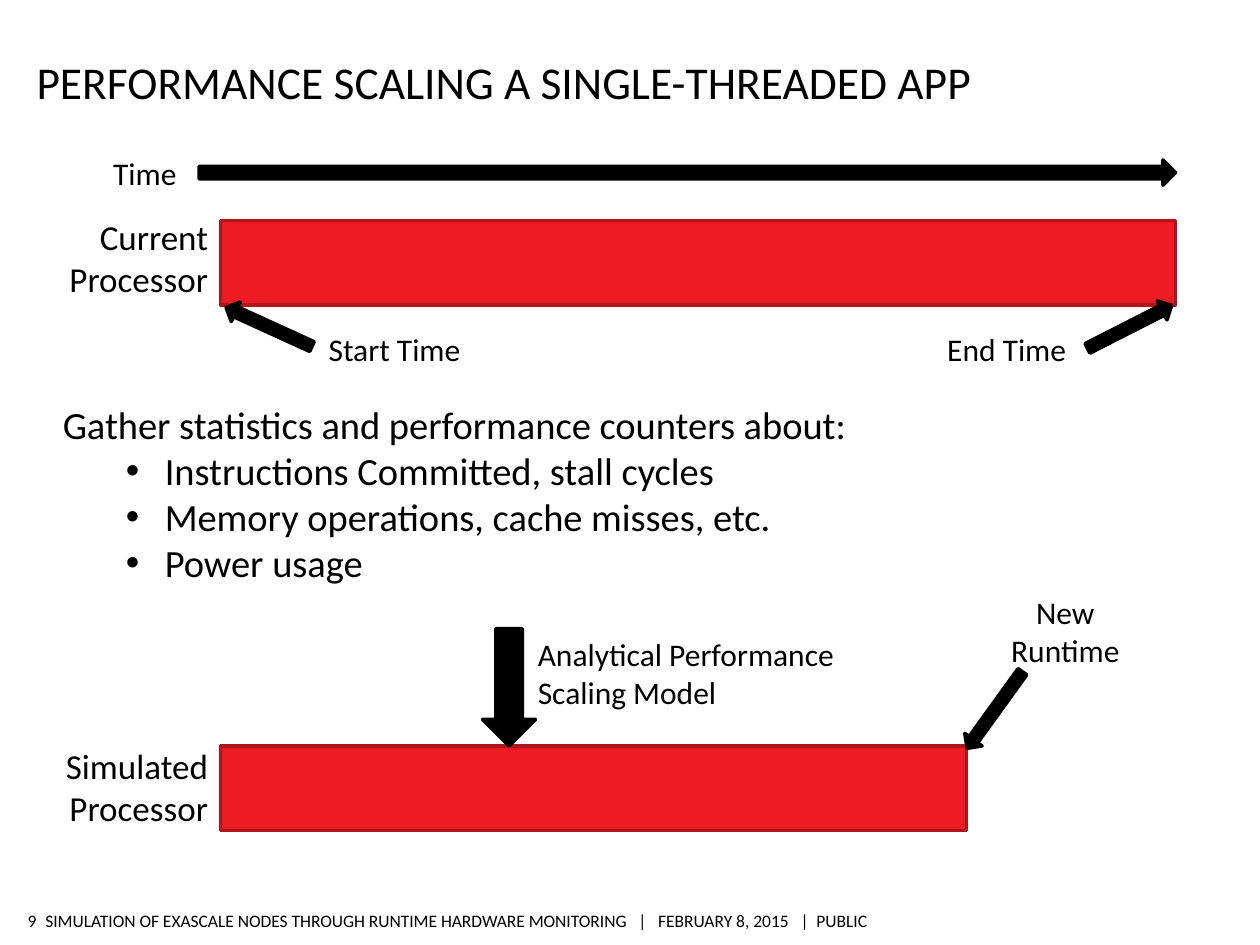
from dataclasses import dataclass

from pptx import Presentation
from pptx.dml.color import RGBColor
from pptx.enum.shapes import MSO_SHAPE
from pptx.enum.text import MSO_ANCHOR, PP_ALIGN
from pptx.util import Inches, Pt
from lxml.etree import SubElement
from pptx.oxml.ns import qn

COLORS = {"black": "000000", "red": "ED1C24", "dark_red": "AF151B"}
FONT = "Calibri"
LEFT, CENTER, RIGHT = PP_ALIGN.LEFT, PP_ALIGN.CENTER, PP_ALIGN.RIGHT
BAR_LEFT, BAR_HEIGHT = 1.75, 0.67


@dataclass
class Label:
    text: str
    left: float
    top: float
    width: float
    height: float
    size: int = 18
    align: PP_ALIGN = LEFT
    anchor: MSO_ANCHOR = MSO_ANCHOR.TOP
    insets: tuple = (0.1, 0.05, 0.1, 0.05)
    wrap: bool = True
    bullets: bool = False  # every paragraph after the first is a bullet


@dataclass
class Block:
    kind: MSO_SHAPE
    left: float
    top: float
    width: float
    height: float
    rotation: float = 0
    fill: str = "black"
    line: str = "black"


def color(name: str) -> RGBColor:
    return RGBColor.from_string(COLORS[name])


def add_bullet(para) -> None:
    properties = para._p.get_or_add_pPr()
    properties.set("marL", str(Inches(0.81)))
    properties.set("indent", str(Inches(-0.31)))
    SubElement(properties, qn("a:buFont")).set("typeface", "Arial")
    SubElement(properties, qn("a:buChar")).set("char", "•")


def draw_label(page, label: Label) -> None:
    box = page.shapes.add_textbox(Inches(label.left), Inches(label.top),
                                  Inches(label.width), Inches(label.height))
    frame = box.text_frame
    frame.word_wrap = label.wrap
    frame.vertical_anchor = label.anchor
    (frame.margin_left, frame.margin_top,
     frame.margin_right, frame.margin_bottom) = map(Inches, label.insets)
    frame.text = label.text
    for index, para in enumerate(frame.paragraphs):
        if label.bullets and index:
            para.level = 1
            add_bullet(para)
        para.alignment = label.align
        for span in para.runs:
            span.font.name = FONT
            span.font.size = Pt(label.size)
            span.font.color.rgb = color("black")


def draw_block(page, block: Block) -> None:
    shape = page.shapes.add_shape(block.kind, Inches(block.left), Inches(block.top),
                                  Inches(block.width), Inches(block.height))
    shape.shadow.inherit = False
    shape.rotation = block.rotation
    shape.fill.solid()
    shape.fill.fore_color.rgb = color(block.fill)
    shape.line.color.rgb = color(block.line)
    shape.line.width = Pt(2)


def runtime_bar(top: float, width: float) -> Block:
    return Block(MSO_SHAPE.RECTANGLE, BAR_LEFT, top, width, BAR_HEIGHT,
                 fill="red", line="dark_red")


def pointer(left: float, top: float, rotation: float) -> Block:
    return Block(MSO_SHAPE.RIGHT_ARROW, left, top, 0.75, 0.17, rotation)


def footer(text: str, left: float, width: float, align: PP_ALIGN) -> Label:
    return Label(text, left, 7.18, width, 0.26, 10, align, MSO_ANCHOR.MIDDLE,
                 (0, 0.04, 0, 0.04), wrap=False)


BLOCKS = [
    # Processor runtimes
    runtime_bar(1.75, 7.58),
    runtime_bar(5.92, 5.92),
    # Time axis and scaling step
    Block(MSO_SHAPE.RIGHT_ARROW, 1.58, 1.27, 7.75, 0.2),
    Block(MSO_SHAPE.DOWN_ARROW, 3.83, 4.99, 0.42, 0.93),
    # Pointers to start, end and new runtime
    pointer(1.76, 2.51, 204.5),
    pointer(8.59, 2.51, 333),
    pointer(7.52, 5.55, 125.8),
]

STATISTICS = "\n".join([
    "Gather statistics and performance counters about:",
    "Instructions Committed, stall cycles",
    "Memory operations, cache misses, etc.",
    "Power usage",
])

LABELS = [
    # Footer and title
    footer("SIMULATION OF EXASCALE NODES THROUGH RUNTIME HARDWARE MONITORING"
           "   |   FEBRUARY 8, 2015   |  PUBLIC", 0.36, 6.79, LEFT),
    footer("9", 0.13, 0.16, RIGHT),
    Label("PERFORMANCE SCALING A SINGLE-THREADED APP", 0.29, 0.34, 8.4, 0.52, 26,
          anchor=MSO_ANCHOR.BOTTOM, insets=(0, 0.05, 0, 0)),
    # Bar names
    Label("Current Processor", 0, 1.66, BAR_LEFT, 0.77, 20, RIGHT),
    Label("Simulated Processor", 0, 5.86, BAR_LEFT, 0.77, 20, RIGHT),
    # Arrow names
    Label("Time", 0.4, 1.17, 1.5, 0.4, align=CENTER),
    Label("Start Time", 2.51, 2.57, 1.53, 0.4),
    Label("End Time", 7.18, 2.57, 1.38, 0.4, align=RIGHT),
    Label("Analytical Performance Scaling Model", 4.17, 4.99, 2.87, 0.71),
    Label("New\nRuntime", 7.87, 4.66, 1.17, 0.71, align=CENTER),
    # Collected statistics
    Label(STATISTICS, 0.4, 3.13, 8.93, 1.58, 22, bullets=True),
]


def main() -> None:
    deck = Presentation()
    deck.slide_width, deck.slide_height = Inches(10), Inches(7.5)
    page = deck.slides.add_slide(deck.slide_layouts[6])
    for block in BLOCKS:
        draw_block(page, block)
    for label in LABELS:
        draw_label(page, label)
    deck.save("out.pptx")


if __name__ == "__main__":
    main()
